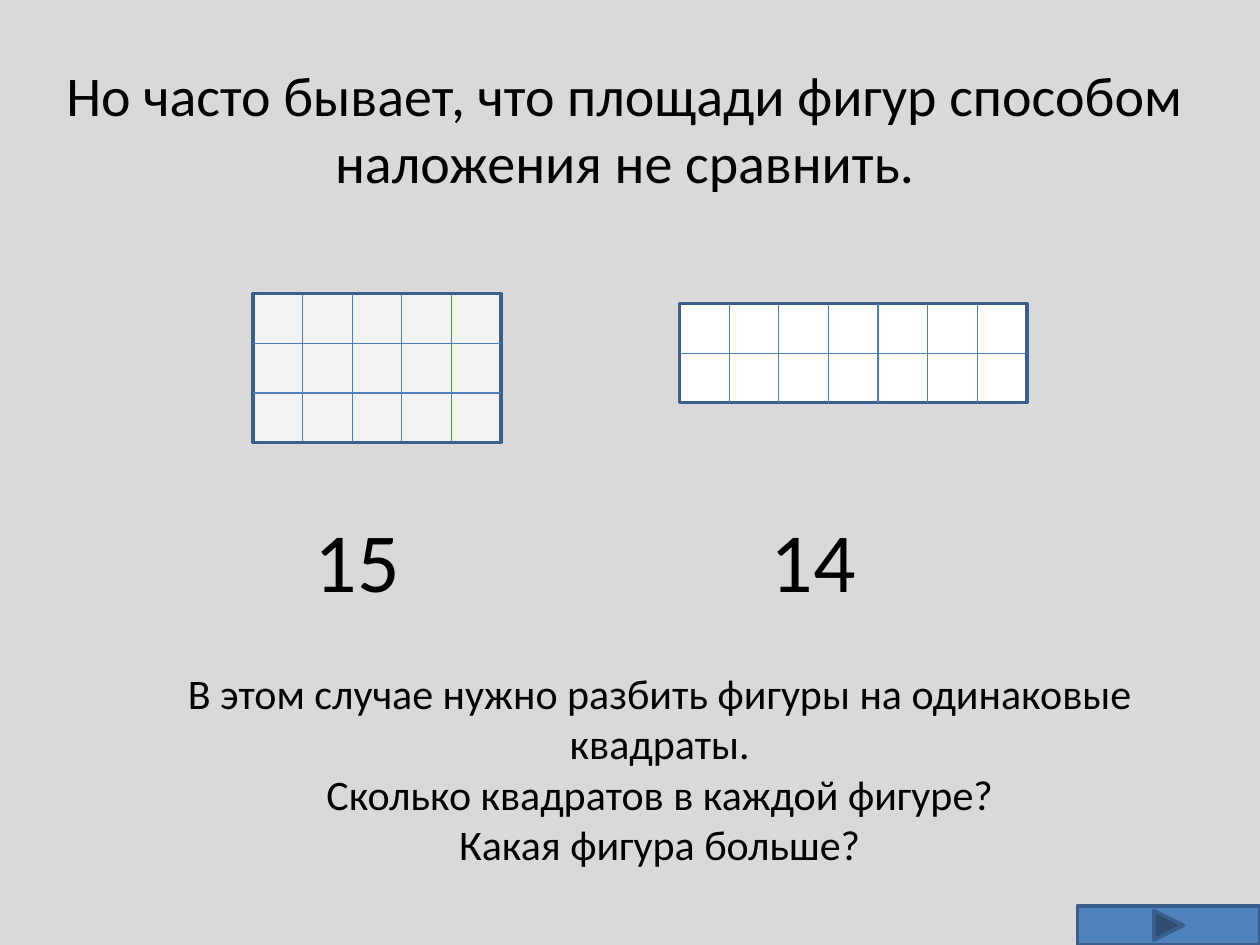
from lxml.etree import SubElement
from pptx import Presentation
from pptx.dml.color import RGBColor
from pptx.enum.shapes import MSO_CONNECTOR, MSO_SHAPE
from pptx.enum.text import MSO_ANCHOR, PP_ALIGN
from pptx.oxml.ns import qn
from pptx.util import Cm, Inches, Pt

BACKGROUND = RGBColor(0xD9, 0xD9, 0xD9)
BLACK = RGBColor(0, 0, 0)
WHITE = RGBColor(0xFF, 0xFF, 0xFF)
LIGHT = RGBColor(0xF2, 0xF2, 0xF2)
BLUE = RGBColor(0x4F, 0x81, 0xBD)
OUTLINE = RGBColor(0x3A, 0x5F, 0x8C)
GRID = RGBColor(0x4B, 0x7E, 0xBC)

# The squares are 1 cm wide; every position is counted in squares.
CELL = Cm(1)

prs = Presentation()
prs.slide_width, prs.slide_height = Inches(10), Inches(7.5)
s = prs.slides.add_slide(prs.slide_layouts[5])
s.background.fill.solid()
s.background.fill.fore_color.rgb = BACKGROUND


def cells(*counts):
    return [round(n * CELL) for n in counts]


def write(sp, lines, size, align):
    tf = sp.text_frame
    tf.word_wrap = True
    for i, line in enumerate(lines):
        p = tf.add_paragraph() if i else tf.paragraphs[0]
        p.alignment = align
        r = p.add_run()
        r.text = line
        r.font.name = "Calibri"
        r.font.size = Pt(size)
        r.font.color.rgb = BLACK


title = s.shapes.title
title.left, title.top, title.width, title.height = cells(0.5, 0.53, 24.2, 4.09)
title.text_frame.vertical_anchor = MSO_ANCHOR.MIDDLE
write(title, ["Но часто бывает, что площади фигур способом наложения не сравнить."],
      32, PP_ALIGN.CENTER)

question = s.shapes.add_textbox(*cells(2.1, 13.33, 22.4, 4.37))
write(question, [
    "В этом случае нужно разбить фигуры на одинаковые квадраты.",
    "Сколько квадратов в каждой фигуре?",
    "Какая фигура больше?",
], 24, PP_ALIGN.CENTER)

# Figures: left, top, columns, rows, fill, left of the count below
figures = [
    (5.1, 5.92, 5, 3, LIGHT, 6.1),
    (13.7, 6.12, 7, 2, WHITE, 15.29),
]
blocks = []
for x, y, cols, rows, fill, count_x in figures:
    rect = s.shapes.add_shape(MSO_SHAPE.RECTANGLE, *cells(x, y, cols, rows))
    blocks.append((rect, fill))

    lines = [(x + c, y, x + c, y + rows) for c in range(1, cols)]
    lines += [(x, y + r, x + cols, y + r) for r in range(1, rows)]
    for ends in lines:
        line = s.shapes.add_connector(MSO_CONNECTOR.STRAIGHT, *cells(*ends))
        line.line.color.rgb = GRID
        line.line.width = Pt(0.75)
        SubElement(line._element.spPr, qn("a:effectLst"))
        if ends[1] == ends[3] == y + rows / 2:
            line.begin_connect(rect, 1)
            line.end_connect(rect, 3)

    count = s.shapes.add_textbox(*cells(count_x, 10.13, 3, 2.31))
    write(count, [str(cols * rows)], 48, PP_ALIGN.LEFT)

button = s.shapes.add_shape(MSO_SHAPE.ACTION_BUTTON_FORWARD_OR_NEXT,
                            *cells(21.72, 18.26, 3.68, 0.79))
blocks.append((button, BLUE))

for sp, fill in blocks:
    sp.shadow.inherit = False
    sp.fill.solid()
    sp.fill.fore_color.rgb = fill
    sp.line.color.rgb = OUTLINE
    sp.line.width = Pt(2)

prs.save("out.pptx")
